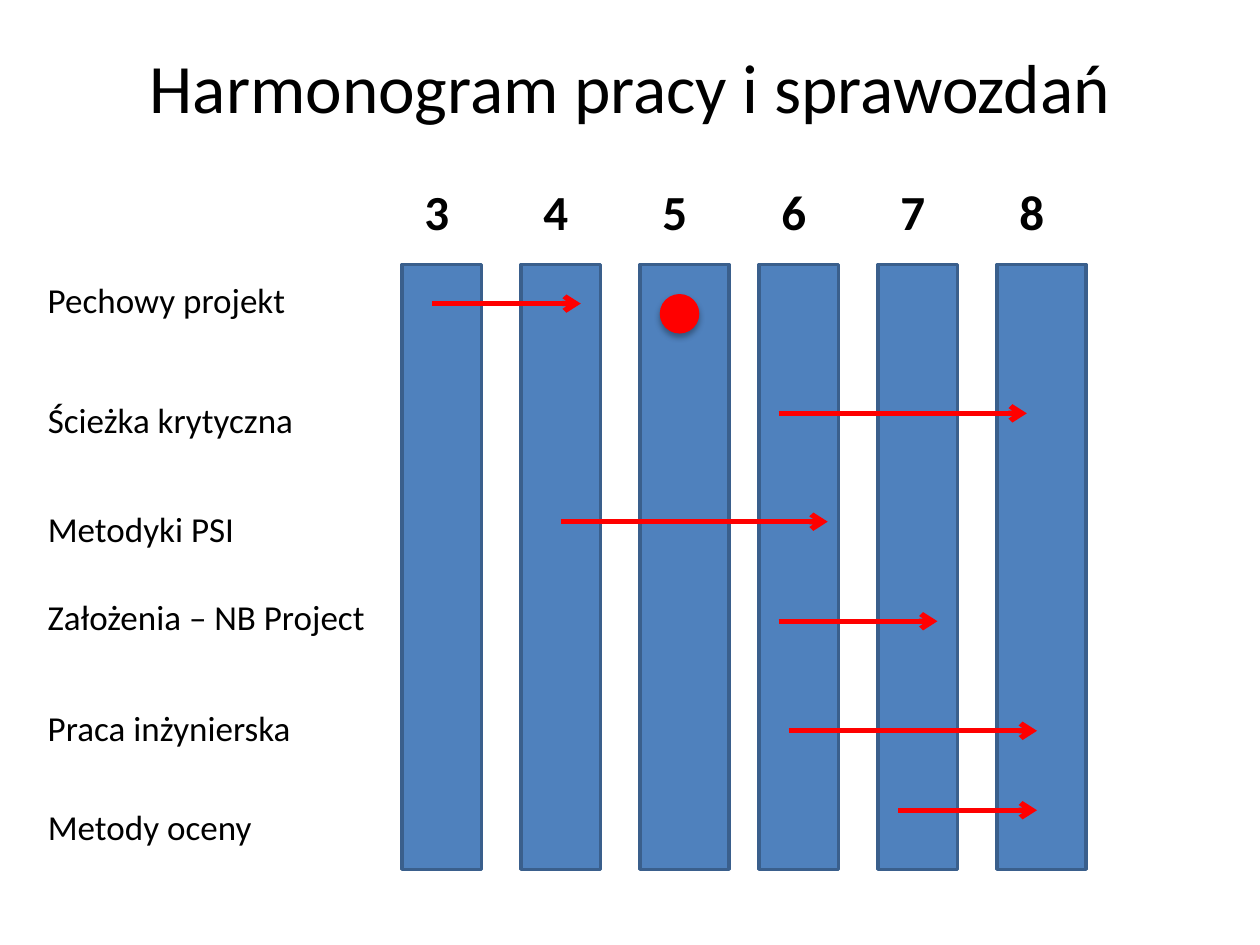
from dataclasses import dataclass

from lxml.etree import SubElement
from pptx import Presentation
from pptx.dml.color import RGBColor
from pptx.enum.shapes import MSO_CONNECTOR, MSO_SHAPE
from pptx.enum.text import MSO_ANCHOR, MSO_AUTO_SIZE, PP_ALIGN
from pptx.oxml.ns import qn
from pptx.shapes.autoshape import Shape
from pptx.slide import Slide
from pptx.text.text import TextFrame
from pptx.util import Pt

FONT = "Calibri"
BLACK, RED, BLUE, DARK_BLUE = "000000", "FF0000", "4F81BD", "3A5F8C"
WEEK_LEFT, WEEK_PITCH = 229.7, 68
BAR_TOP, BAR_HEIGHT = 151.2, 345.6


@dataclass(frozen=True)
class Week:
    number: int
    width: float


@dataclass(frozen=True)
class Task:
    name: str
    label_top: float
    label_width: float
    arrow_start: float
    arrow_end: float
    arrow_y: float


WEEKS = [Week(number, 51 if number in (5, 8) else 45.4) for number in range(3, 9)]
TASKS = [
    Task("Pechowy projekt", 155.5, 158.4, 247, 331.9, 173.5),
    Task("Ścieżka krytyczna", 223.9, 215.3, 445, 586.8, 236.2),
    Task("Metodyki PSI", 286.6, 193, 320.4, 473, 298.1),
    Task("Założenia – NB Project", 337, 198.7, 445, 535.7, 355),
    Task("Praca inżynierska", 400.3, 175.7, 450.7, 592.6, 417.6),
    Task("Metody oceny", 456.5, 164.2, 513.4, 592.6, 463),
]


def color(value: str) -> RGBColor:
    return RGBColor.from_string(value)


def add_run(frame: TextFrame, text: str, size: float, bold: bool = False) -> None:
    run = frame.paragraphs[0].add_run()
    run.text = text
    run.font.name = FONT
    run.font.size = Pt(size)
    run.font.bold = bold
    run.font.color.rgb = color(BLACK)


def add_title(slide: Slide, text: str) -> None:
    title = slide.shapes.title
    title.left, title.top, title.width, title.height = Pt(36), Pt(21.6), Pt(648), Pt(55.4)
    frame = title.text_frame
    frame.vertical_anchor = MSO_ANCHOR.MIDDLE
    frame.auto_size = MSO_AUTO_SIZE.NONE
    frame.paragraphs[0].alignment = PP_ALIGN.CENTER
    add_run(frame, text, 39.6)


def add_label(slide: Slide, text: str, left: float, top: float, width: float,
              height: float, size: float, bold: bool = False) -> None:
    box = slide.shapes.add_textbox(Pt(left), Pt(top), Pt(width), Pt(height))
    box.text_frame.word_wrap = True
    box.text_frame.auto_size = MSO_AUTO_SIZE.SHAPE_TO_FIT_TEXT
    add_run(box.text_frame, text, size, bold)


def add_filled(slide: Slide, kind: MSO_SHAPE, left: float, top: float,
               width: float, height: float, fill: str) -> Shape:
    shape = slide.shapes.add_shape(kind, Pt(left), Pt(top), Pt(width), Pt(height))
    shape.shadow.inherit = False
    shape.fill.solid()
    shape.fill.fore_color.rgb = color(fill)
    return shape


def add_week(slide: Slide, week: Week, left: float) -> None:
    bar = add_filled(slide, MSO_SHAPE.RECTANGLE, left, BAR_TOP, week.width, BAR_HEIGHT, BLUE)
    bar.line.color.rgb = color(DARK_BLUE)
    bar.line.width = Pt(2)
    add_label(slide, str(week.number), left + 5.7, 100.1, 56.9, 41, 28, bold=True)


def add_arrow(slide: Slide, start: float, end: float, y: float) -> None:
    arrow = slide.shapes.add_connector(
        MSO_CONNECTOR.STRAIGHT, Pt(start), Pt(y), Pt(end), Pt(y))
    arrow.line.color.rgb = color(RED)
    arrow.line.width = Pt(3)
    SubElement(arrow.line._get_or_add_ln(), qn("a:tailEnd"), type="arrow")
    SubElement(arrow._element.spPr, qn("a:effectLst"))


def add_milestone(slide: Slide, left: float, top: float, diameter: float) -> None:
    dot = add_filled(slide, MSO_SHAPE.OVAL, left, top, diameter, diameter, RED)
    dot.line.fill.background()
    effects = dot._element.spPr.find(qn("a:effectLst"))
    shadow = SubElement(effects, qn("a:outerShdw"), blurRad=str(Pt(3.5)),
                        dist=str(Pt(2.2)), dir="5400000", rotWithShape="0")
    shade = SubElement(shadow, qn("a:srgbClr"), val=BLACK)
    SubElement(shade, qn("a:alpha"), val="32000")


def main() -> None:
    """Build the work and report schedule slide."""
    presentation = Presentation()
    presentation.slide_width, presentation.slide_height = Pt(720), Pt(540)
    slide = presentation.slides.add_slide(presentation.slide_layouts[5])
    add_title(slide, "Harmonogram pracy i sprawozdań")
    for index, week in enumerate(WEEKS):
        add_week(slide, week, WEEK_LEFT + index * WEEK_PITCH)
    for task in TASKS:
        add_label(slide, task.name, 20.2, task.label_top, task.label_width, 31.7, 20)
        add_arrow(slide, task.arrow_start, task.arrow_end, task.arrow_y)
    add_milestone(slide, 377, 168, 22.6)
    presentation.save("out.pptx")


if __name__ == "__main__":
    main()
